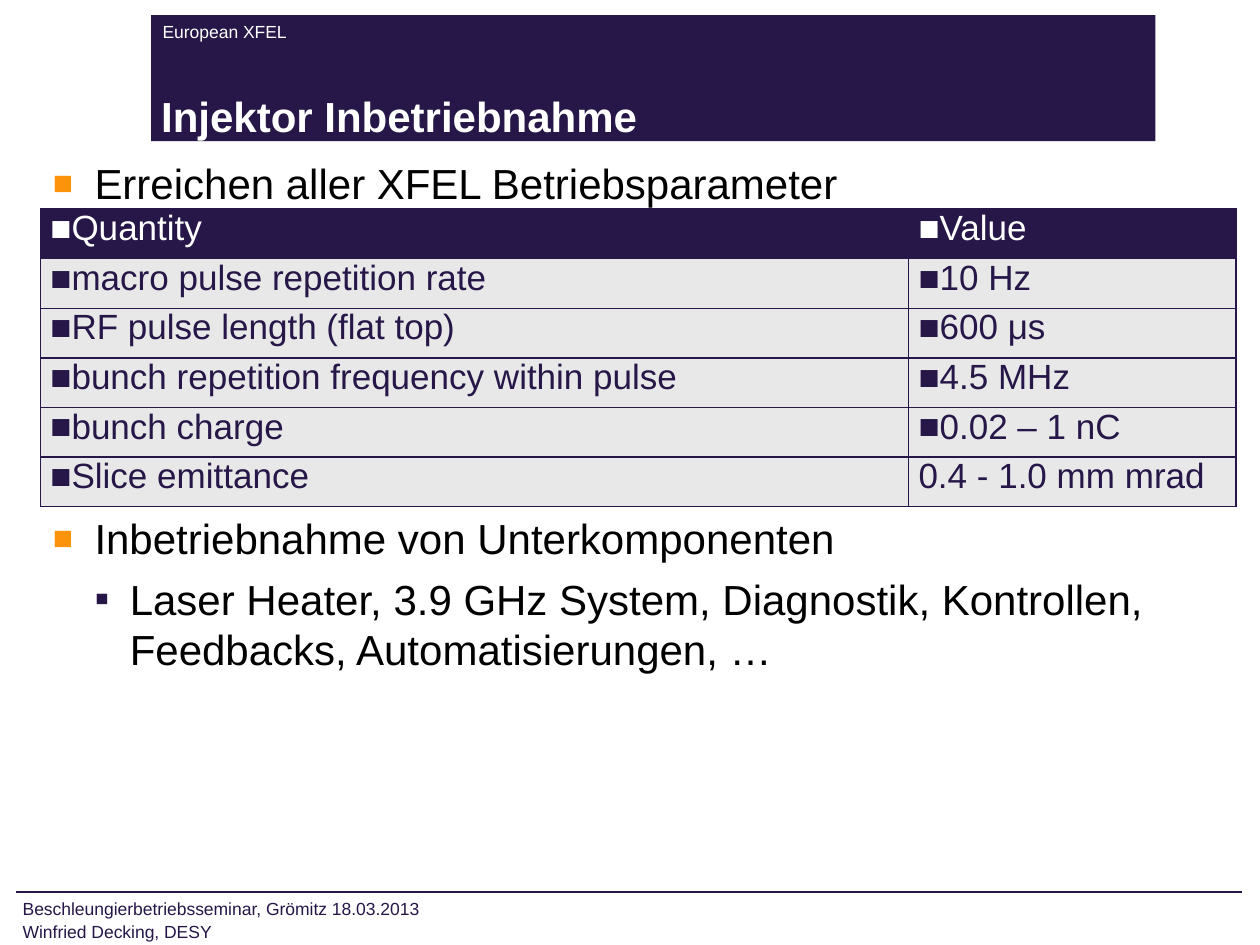
from lxml import etree
from pptx import Presentation
from pptx.dml.color import RGBColor
from pptx.enum.shapes import MSO_CONNECTOR, MSO_SHAPE
from pptx.enum.text import MSO_ANCHOR
from pptx.oxml.ns import qn
from pptx.util import Inches, Pt

RECT = MSO_SHAPE.RECTANGLE
STRAIGHT = MSO_CONNECTOR.STRAIGHT
TOP, BOTTOM = MSO_ANCHOR.TOP, MSO_ANCHOR.BOTTOM
NAVY, ORANGE, GREY, WHITE, BLACK = "261748", "FD930A", "E8E8E9", "FFFFFF", "000000"

ROWS = [
    ("Quantity", "Value"),
    ("macro pulse repetition rate", "10 Hz"),
    ("RF pulse length (flat top)", "600 μs"),
    ("bunch repetition frequency within pulse", "4.5 MHz"),
    ("bunch charge", "0.02 – 1 nC"),
    ("Slice emittance", "0.4 - 1.0 mm mrad"),
]
UNBULLETED = "0.4 - 1.0 mm mrad"

# text, bullet, bullet colour, bullet size, left margin, hanging indent, space before
BODY = [
    ("Erreichen aller XFEL Betriebsparameter", "■", ORANGE, 80, 0.33, 0.33, 0),
    ("Inbetriebnahme von Unterkomponenten", "■", ORANGE, 80, 0.33, 0.33, 174),
    ("Laser Heater, 3.9 GHz System, Diagnostik, Kontrollen, Feedbacks, "
     "Automatisierungen, …", "▪", NAVY, 100, 0.61, 0.28, 6),
]


def rgb(value):
    """Return the colour for a hex string."""
    return RGBColor.from_string(value)


class Deck:
    """Style and current slide, with one method per kind of element."""

    font = "Arial"

    def __init__(self, prs):
        """Add a blank slide to the presentation."""
        self.s = prs.slides.add_slide(prs.slide_layouts[6])

    def style(self, p, size, color, bold=False):
        """Format every run of a paragraph."""
        for r in p.runs:
            r.font.name, r.font.size, r.font.bold = self.font, Pt(size), bold
            r.font.color.rgb = rgb(color)

    def bullet(self, p, char, color=None, size=100, left=0, hanging=0):
        """Give a paragraph a bullet and its indents."""
        pPr = p._p.get_or_add_pPr()
        pPr.set("marL", str(Inches(left)))
        pPr.set("indent", str(-Inches(hanging)))
        if color:
            clr = etree.SubElement(pPr, qn("a:buClr"))
            etree.SubElement(clr, qn("a:srgbClr"), val=color)
        etree.SubElement(pPr, qn("a:buSzPct"), val=str(size * 1000))
        etree.SubElement(pPr, qn("a:buFont"), typeface=self.font)
        etree.SubElement(pPr, qn("a:buChar"), char=char)

    def bar(self, x, y, w, h, color):
        """Draw a filled rectangle without outline."""
        sp = self.s.shapes.add_shape(RECT, Inches(x), Inches(y), Inches(w), Inches(h))
        sp.shadow.inherit = False
        sp.fill.solid()
        sp.fill.fore_color.rgb = rgb(color)
        sp.line.fill.background()

    def line(self, x1, y1, x2, y2, color):
        """Draw a thin straight line."""
        cn = self.s.shapes.add_connector(
            STRAIGHT, Inches(x1), Inches(y1), Inches(x2), Inches(y2))
        cn.line.color.rgb = rgb(color)
        cn.line.width = Pt(1)
        etree.SubElement(cn._element.spPr, qn("a:effectLst"))

    def frame(self, x, y, w, h, insets, anchor):
        """Add a wrapping text box and return its text frame."""
        sp = self.s.shapes.add_textbox(Inches(x), Inches(y), Inches(w), Inches(h))
        tf = sp.text_frame
        tf.word_wrap = True
        tf.vertical_anchor = anchor
        tf.margin_left, tf.margin_top, tf.margin_right, tf.margin_bottom = map(Inches, insets)
        return tf

    def text(self, box, text, size, color, insets, bold=False, spacing=1.0):
        """Add a bottom-anchored paragraph of text."""
        tf = self.frame(*box, insets, BOTTOM)
        tf.text = text
        p = tf.paragraphs[0]
        p.line_spacing = spacing
        self.style(p, size, color, bold)

    def bullets(self, box, items, size, color, insets):
        """Add a bulleted list."""
        tf = self.frame(*box, insets, TOP)
        for i, (text, char, tint, scale, left, hanging, before) in enumerate(items):
            p = tf.add_paragraph() if i else tf.paragraphs[0]
            p.text = text
            self.bullet(p, char, tint, scale, left, hanging)
            p.space_before = Pt(before)
            self.style(p, size, color)

    def border(self, cell, color):
        """Outline all four sides of a cell."""
        tcPr = cell._tc.get_or_add_tcPr()
        for i, side in enumerate(("lnL", "lnR", "lnT", "lnB")):
            ln = etree.Element(qn(f"a:{side}"), w=str(Pt(1)))
            fill = etree.SubElement(ln, qn("a:solidFill"))
            etree.SubElement(fill, qn("a:srgbClr"), val=color)
            tcPr.insert(i, ln)

    def table(self, x, y, widths, row_height, rows, size):
        """Add a table with a dark header row."""
        shape = self.s.shapes.add_table(
            len(rows), len(widths), Inches(x), Inches(y),
            Inches(sum(widths)), Inches(row_height * len(rows)))
        table = shape.table
        table.first_row = table.horz_banding = False
        for column, width in zip(table.columns, widths):
            column.width = Inches(width)
        for i, row in enumerate(rows):
            for j, text in enumerate(row):
                cell = table.cell(i, j)
                cell.margin_left = cell.margin_right = Inches(0.08)
                cell.margin_top = cell.margin_bottom = 0
                cell.fill.solid()
                cell.fill.fore_color.rgb = rgb(GREY if i else NAVY)
                self.border(cell, NAVY)
                cell.text_frame.text = text
                p = cell.text_frame.paragraphs[0]
                if text != UNBULLETED:
                    self.bullet(p, "■")
                self.style(p, size, NAVY if i else WHITE)


def main():
    """Build the slide and save it."""
    prs = Presentation()
    prs.slide_width, prs.slide_height = Inches(10), Inches(7.5)
    deck = Deck(prs)
    small = (0.09, 0, 0.05, 0)
    deck.line(0.13, 7.08, 9.86, 7.08, NAVY)
    deck.bar(1.2, 0.12, 7.97, 1, NAVY)
    deck.text((1.2, 0.12, 7.25, 0.21), "European XFEL", 10, WHITE, small, spacing=1.1)
    deck.text((0.09, 6.98, 3.57, 0.5),
              "Beschleungierbetriebsseminar, Grömitz 18.03.2013 Winfried Decking, DESY",
              10, NAVY, small, spacing=1.1)
    deck.text((1.2, 0.59, 7.97, 0.53), "Injektor Inbetriebnahme", 24, WHITE,
              (0.08, 0.05, 0.1, 0), bold=True)
    deck.bullets((0.12, 1.25, 9.75, 4.88), BODY, 24, BLACK, (0.3, 0, 0.1, 0.05))
    deck.table(0.32, 1.66, (6.89, 2.6), 2.36 / 6, ROWS, 20)
    prs.save("out.pptx")


if __name__ == "__main__":
    main()
